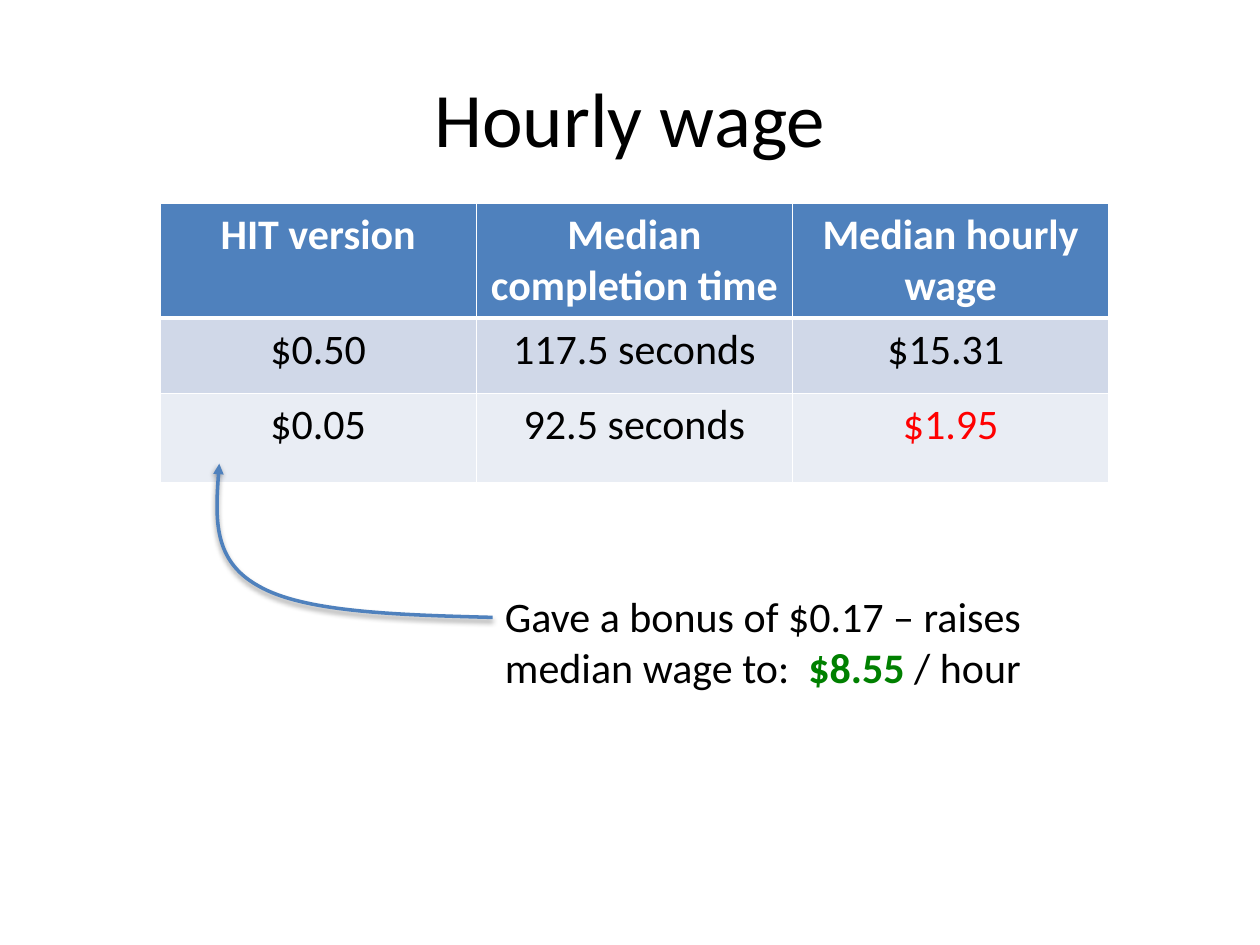
import pptx
import pptx.dml.color
import pptx.enum.text
import pptx.oxml
import pptx.oxml.ns
import pptx.util

Inches = pptx.util.Inches
Pt = pptx.util.Pt
qn = pptx.oxml.ns.qn
ALIGN = pptx.enum.text.PP_ALIGN
ANCHOR = pptx.enum.text.MSO_ANCHOR

FONT = "Calibri"
COLORS = {
    "text": "000000",
    "white": "FFFFFF",
    "head": "4F81BD",
    "odd": "D0D8E8",
    "even": "E9EDF4",
    "low": "FF0000",
    "raised": "008000",
}
ROWS = [
    ["HIT version", "Median completion time", "Median hourly wage"],
    ["$0.50", "117.5 seconds", "$15.31 "],
    ["$0.05", "92.5 seconds", "$1.95"],
]
HEIGHTS = [0.9, 0.6, 0.71]
WIDTH = 2.51


def color(name):
    return pptx.dml.color.RGBColor.from_string(COLORS[name])


def add_node(parent, tag, inner="", **attrs):
    """Append one DrawingML element, with optional inner markup."""
    pairs = " ".join(f'{key}="{val}"' for key, val in attrs.items())
    node = pptx.oxml.parse_xml(
        f'<a:{tag} {pptx.oxml.ns.nsdecls("a")} {pairs}>{inner}</a:{tag}>')
    parent.append(node)
    return node


def write(para, text, size=24, fill="text", bold=False, align=None):
    run = para.add_run()
    run.text = text
    run.font.name = FONT
    run.font.size = Pt(size)
    run.font.bold = bold
    run.font.color.rgb = color(fill)
    if align is not None:
        para.alignment = align


def set_edges(cell, base):
    """Draw white cell borders; they must precede the cell's fill."""
    props = cell._tc.get_or_add_tcPr()
    solid = f'<a:solidFill><a:srgbClr val="{COLORS["white"]}"/></a:solidFill>'
    for side, width in (("L", 1), ("R", 1), ("T", 1), ("B", base)):
        add_node(props, "ln" + side, solid, w=Pt(width))


def add_title(slide, text):
    title = slide.shapes.title
    title.left, title.top = Inches(0.5), Inches(0.3)
    title.width, title.height = Inches(9), Inches(1.25)
    title.text_frame.vertical_anchor = ANCHOR.MIDDLE
    write(title.text_frame.paragraphs[0], text, size=44, align=ALIGN.CENTER)


def add_wages(slide):
    count = len(ROWS[0])
    table = slide.shapes.add_table(
        len(ROWS), count, Inches(1.27), Inches(1.61),
        Inches(WIDTH * count), Inches(sum(HEIGHTS))).table
    for col in table.columns:
        col.width = Inches(WIDTH)
    fills = ["head", "odd", "even"]
    for r, row in enumerate(ROWS):
        table.rows[r].height = Inches(HEIGHTS[r])
        for c, text in enumerate(row):
            cell = table.cell(r, c)
            set_edges(cell, 3 if r == 0 else 1)
            cell.fill.solid()
            cell.fill.fore_color.rgb = color(fills[r])
            ink = "white" if r == 0 else "low" if text == "$1.95" else "text"
            write(cell.text_frame.paragraphs[0], text, fill=ink,
                  bold=r == 0, align=ALIGN.CENTER)


def add_curve(slide, points):
    """Draw a curved arrow through a start and sets of three Bezier points."""
    first, *rest = [(Inches(x), Inches(y)) for x, y in points]
    pen = slide.shapes.build_freeform(*first)
    pen.add_line_segments(rest, close=False)
    curve = pen.convert_to_shape()

    # Turn each three line points into one cubic segment
    lines = list(curve._element.iter(qn("a:lnTo")))
    trace = lines[0].getparent()
    for i in range(0, len(lines), 3):
        bend = add_node(trace, "cubicBezTo")
        for line in lines[i:i + 3]:
            bend.append(line[0])
            trace.remove(line)

    # Line, arrowhead and soft shadow
    curve.fill.background()
    curve.line.color.rgb = color("head")
    curve.line.width = Pt(2)
    add_node(curve.line._get_or_add_ln(), "tailEnd", type="triangle")
    curve.shadow.inherit = False
    shade = '<a:srgbClr val="000000"><a:alpha val="38000"/></a:srgbClr>'
    add_node(curve._element.spPr.find(qn("a:effectLst")), "outerShdw", shade,
             blurRad=Pt(3.1), dist=Pt(1.6), dir=5400000, rotWithShape=0)


def add_note(slide):
    box = slide.shapes.add_textbox(
        Inches(3.91), Inches(4.64), Inches(4.9), Inches(0.91))
    frame = box.text_frame
    frame.word_wrap = True
    frame.auto_size = pptx.enum.text.MSO_AUTO_SIZE.SHAPE_TO_FIT_TEXT
    para = frame.paragraphs[0]
    write(para, "Gave a bonus of $0.17 – raises median wage to:  ")
    write(para, "$8.55 ", fill="raised", bold=True)
    write(para, "/ hour")


def main():
    deck = pptx.Presentation()
    deck.slide_width, deck.slide_height = Inches(10), Inches(7.5)
    slide = deck.slides.add_slide(deck.slide_layouts[5])

    add_title(slide, "Hourly wage")
    add_wages(slide)

    # Arrow from the bonus note up to the low-paid row
    add_curve(slide, [(3.91, 4.9),
                      (3.16, 4.88), (2.41, 4.86), (2.05, 4.65),
                      (1.69, 4.45), (1.71, 4.07), (1.74, 3.68)])
    add_note(slide)
    deck.save("out.pptx")


if __name__ == "__main__":
    main()
